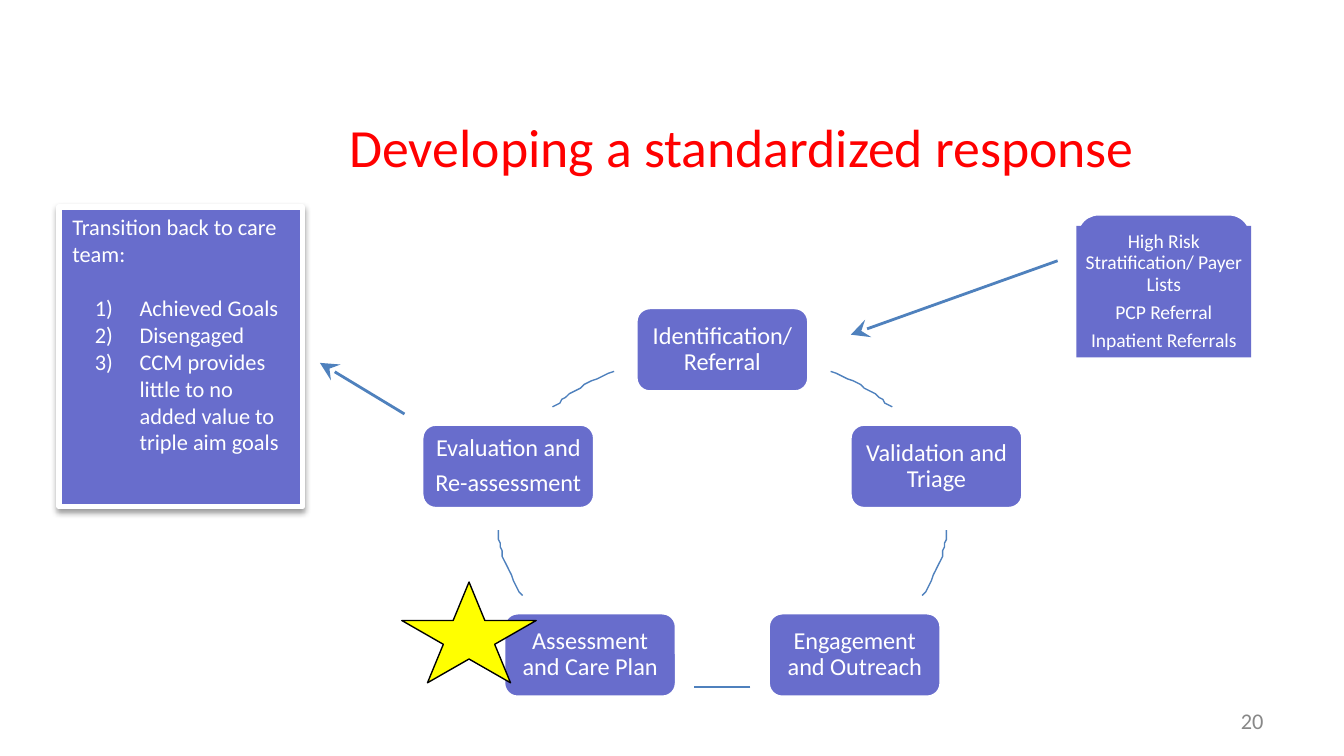
from math import cos, radians, sin

from lxml import etree
from pptx import Presentation
from pptx.dml.color import RGBColor
from pptx.enum.shapes import MSO_CONNECTOR, MSO_SHAPE as SHAPE
from pptx.enum.text import MSO_ANCHOR as ANCHOR, PP_ALIGN as ALIGN
from pptx.oxml.ns import qn
from pptx.util import Pt

COLORS = {
    "box": "686DCC",
    "line": "4F81BD",
    "title": "FF0000",
    "white": "FFFFFF",
    "black": "000000",
    "star": "FFFF00",
    "number": "888888",
}
FONT = "Calibri"

# Angle on the ellipse, in degrees, and the paragraphs of each step
STEPS = [
    (-90, ["Identification/ Referral"]),
    (-18, ["Validation and Triage"]),
    (54, ["Engagement and Outreach"]),
    (126, ["Assessment and Care Plan"]),
    (198, ["Evaluation and", "Re-assessment"]),
]
ARCS = [(-61, -41), (4, 27), (83, 97), (153, 176), (221, 241)]
GOALS = [
    "Achieved Goals",
    "Disengaged",
    "CCM provides little to no added value to triple aim goals",
]
SOURCES = ["High Risk Stratification/ Payer Lists", "PCP Referral", "Inpatient Referrals"]


def rgb(name):
    return RGBColor.from_string(COLORS[name])


def add_box(slide, kind, left, top, width, height, fill="box", line=None, weight=2):
    shape = slide.shapes.add_shape(kind, Pt(left), Pt(top), Pt(width), Pt(height))
    shape.shadow.inherit = False
    shape.fill.solid()
    shape.fill.fore_color.rgb = rgb(fill)
    if line:
        shape.line.color.rgb = rgb(line)
        shape.line.width = Pt(weight)
    else:
        shape.line.fill.background()
    return shape


def style(paragraph, size, color="white", align=ALIGN.CENTER):
    paragraph.alignment = align
    paragraph.font.size = Pt(size)
    paragraph.font.name = FONT
    paragraph.font.color.rgb = rgb(color)


def write_centred(shape, texts, size, gap):
    """Fill a shape with tightly set, centred paragraphs."""
    frame = shape.text_frame
    frame.word_wrap = True
    frame.vertical_anchor = ANCHOR.MIDDLE
    frame.margin_left = frame.margin_right = Pt(3.6)
    frame.margin_top = frame.margin_bottom = Pt(3.6)
    for index, text in enumerate(texts):
        paragraph = frame.add_paragraph() if index else frame.paragraphs[0]
        paragraph.text = text
        paragraph.line_spacing = 0.9
        if index:
            paragraph.space_before = Pt(gap)
        style(paragraph, size)


def add_label(slide, text, left, top, width, height, size, color, align):
    box = slide.shapes.add_textbox(Pt(left), Pt(top), Pt(width), Pt(height))
    frame = box.text_frame
    frame.word_wrap = True
    frame.vertical_anchor = ANCHOR.MIDDLE
    frame.text = text
    style(frame.paragraphs[0], size, color, align)


def add_cycle(slide, left, top, width, height):
    """Place the steps and the arcs between them on an ellipse."""
    radius_x, radius_y = width / 2, height / 2
    node_width, node_height = 92.8, 45.4

    def point(angle):
        return (left + radius_x * (1 + cos(radians(angle))),
                top + radius_y * (1 + sin(radians(angle))))

    for angle, texts in STEPS:
        x, y = point(angle)
        node = add_box(slide, SHAPE.ROUNDED_RECTANGLE, x - node_width / 2,
                       y - node_height / 2, node_width, node_height, line="white")
        write_centred(node, texts, 13, 4.5)

    segments = 16
    for start, end in ARCS:
        points = [point(start + (end - start) * i / segments)
                  for i in range(segments + 1)]
        builder = slide.shapes.build_freeform(*points[0], scale=Pt(1))
        builder.add_line_segments(points[1:], close=False)
        arc = builder.convert_to_shape()
        arc.shadow.inherit = False
        arc.fill.background()
        arc.line.color.rgb = rgb("line")
        arc.line.width = Pt(0.75)


def add_drop_shadow(shape):
    effects = shape._element.spPr.find(qn("a:effectLst"))
    shadow = etree.SubElement(effects, qn("a:outerShdw"), blurRad=str(Pt(3.1)),
                              dist=str(Pt(1.6)), dir="5400000", rotWithShape="0")
    color = etree.SubElement(shadow, qn("a:srgbClr"), val=COLORS["black"])
    etree.SubElement(color, qn("a:alpha"), val="38000")


def add_transition(slide, left, top, width, height):
    box = add_box(slide, SHAPE.RECTANGLE, left, top, width, height,
                  line="white", weight=3)
    add_drop_shadow(box)
    frame = box.text_frame
    frame.word_wrap = True
    frame.vertical_anchor = ANCHOR.TOP
    heading = frame.paragraphs[0]
    heading.text = "Transition back to care team:"
    heading.space_after = Pt(14.4)
    style(heading, 12, align=ALIGN.LEFT)
    for goal in GOALS:
        paragraph = frame.add_paragraph()
        paragraph.text = goal
        properties = paragraph._p.get_or_add_pPr()
        properties.set("marL", str(Pt(36)))
        properties.set("indent", str(Pt(-24)))
        etree.SubElement(properties, qn("a:buAutoNum"), type="arabicParenR")
        style(paragraph, 12, align=ALIGN.LEFT)


def add_referral_sources(slide, left, top, width, height):
    tab = 6.5
    add_box(slide, SHAPE.ROUNDED_RECTANGLE, left, top, width, height - tab, line="white")
    panel = add_box(slide, SHAPE.RECTANGLE, left, top + tab, width, height - tab)
    write_centred(panel, SOURCES, 10.5, 3.7)


def add_arrow(slide, x1, y1, x2, y2):
    arrow = slide.shapes.add_connector(MSO_CONNECTOR.STRAIGHT,
                                       Pt(x1), Pt(y1), Pt(x2), Pt(y2))
    arrow.line.color.rgb = rgb("line")
    arrow.line.width = Pt(1.5)
    etree.SubElement(arrow.line._get_or_add_ln(), qn("a:tailEnd"), type="stealth",
                     w="lg", len="lg")
    etree.SubElement(arrow._element.spPr, qn("a:effectLst"))


def main():
    presentation = Presentation()
    presentation.slide_width, presentation.slide_height = Pt(720), Pt(405)
    slide = presentation.slides.add_slide(presentation.slide_layouts[6])

    add_label(slide, "Developing a standardized response", 100.8, 57, 593.3, 42,
              28.8, "title", ALIGN.CENTER)
    add_label(slide, "20", 516.2, 375.1, 167.8, 21.6, 12, "number", ALIGN.RIGHT)
    add_cycle(slide, 266.4, 187.4, 241.2, 180.8)
    add_transition(slide, 31.7, 110.9, 130.3, 160.6)
    add_referral_sources(slide, 576.7, 114.5, 93.6, 77)
    add_box(slide, SHAPE.STAR_5_POINT, 215.3, 311.8, 72, 54,
            fill="star", line="black", weight=0.75)
    add_arrow(slide, 566.6, 139.7, 455.8, 179.3)
    add_arrow(slide, 216.7, 221.8, 171.4, 194.4)
    presentation.save("out.pptx")


if __name__ == "__main__":
    main()
